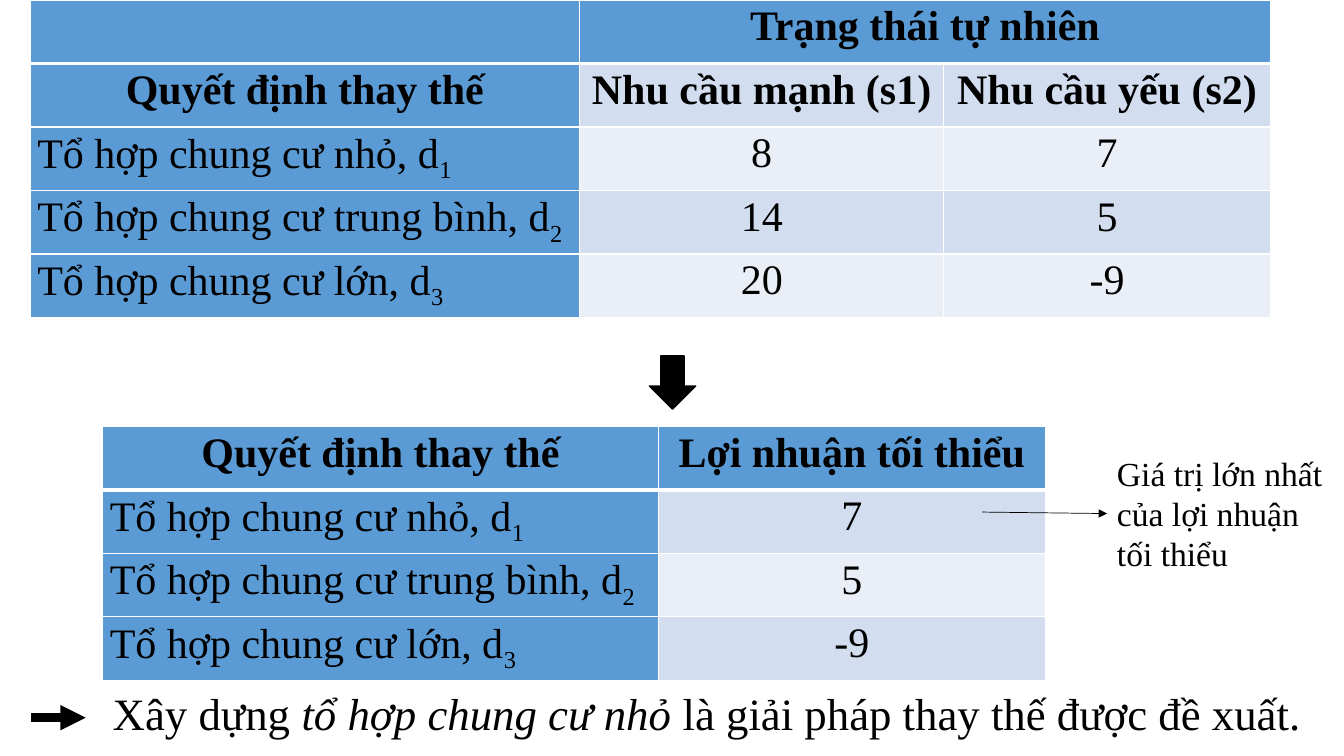
from dataclasses import dataclass

from lxml.etree import SubElement
from pptx import Presentation
from pptx.dml.color import RGBColor
from pptx.enum.shapes import MSO_CONNECTOR, MSO_SHAPE
from pptx.enum.text import MSO_AUTO_SIZE, PP_ALIGN
from pptx.oxml.ns import qn
from pptx.util import Pt

SCALE = 9144


def px(*nums):
    """Turn px lengths, 100 to the inch, into EMU."""
    return [num * SCALE for num in nums]


@dataclass(frozen=True)
class Theme:
    """Colours, font and type sizes of the slide."""
    ink: str = "000000"
    rule: str = "FFFFFF"
    head: str = "5B9BD5"
    bands: tuple = ("D2DEEF", "EAEFF7")
    font: str = "Times New Roman"
    cell: int = 30
    note: int = 24
    close: int = 32


class Board:
    """Draws styled elements on the current slide."""

    def __init__(self, slide, theme):
        self.shapes = slide.shapes
        self.theme = theme

    def label(self, par, text, size, bold=False):
        """Set text; parts between bars are subscript digits or italics."""
        for spot, part in enumerate(text.split("|")):
            run = par.add_run()
            run.text = part
            font = run.font
            font.name, font.size, font.bold = self.theme.font, Pt(size), bold
            font.color.rgb = RGBColor.from_string(self.theme.ink)
            if spot % 2 and part.isdigit():
                run._r.get_or_add_rPr().set("baseline", "-25000")
            elif spot % 2:
                font.italic = True

    def text(self, box, text, size):
        """Add a wrapped text box."""
        shape = self.shapes.add_textbox(*px(*box))
        frame = shape.text_frame
        frame.word_wrap = True
        frame.auto_size = MSO_AUTO_SIZE.SHAPE_TO_FIT_TEXT
        self.label(frame.paragraphs[0], text, size)
        return shape

    def edge(self, cell, low):
        """Rule the four sides of a cell, the bottom one low points wide."""
        for side, width in zip("LRTB", (1, 1, 1, low)):
            line = SubElement(cell._tc.get_or_add_tcPr(), qn(f"a:ln{side}"), w=str(Pt(width)))
            fill = SubElement(line, qn("a:solidFill"))
            SubElement(fill, qn("a:srgbClr"), val=self.theme.rule)

    def table(self, spot, widths, rows, heads=1):
        """Add a banded table with a blue top row and first column."""
        theme, high = self.theme, 63
        size = (sum(widths), high * len(rows))
        grid = self.shapes.add_table(len(rows), len(widths), *px(*spot, *size)).table
        for col, width in zip(grid.columns, px(*widths)):
            col.width = width
        for r, row in enumerate(rows):
            grid.rows[r].height = px(high)[0]
            for c, text in enumerate(row):
                cell = grid.cell(r, c)
                cell.margin_left = cell.margin_right = px(7)[0]
                cell.margin_top = cell.margin_bottom = 0
                self.edge(cell, 1 if r else 3)
                cell.fill.solid()
                tone = theme.bands[(r - 1) % 2] if r and c else theme.head
                cell.fill.fore_color.rgb = RGBColor.from_string(tone)
                if text:
                    par = cell.text_frame.paragraphs[0]
                    par.line_spacing = 1.07
                    par.alignment = PP_ALIGN.CENTER if c or r < heads else PP_ALIGN.LEFT
                    self.label(par, text, theme.cell, r < heads)
        return grid

    def arrow(self, ends, width):
        """Add a straight arrow."""
        link = self.shapes.add_connector(MSO_CONNECTOR.STRAIGHT, *px(*ends))
        link.line.width = Pt(width)
        link.line.color.rgb = RGBColor.from_string(self.theme.ink)
        props = link._element.spPr
        SubElement(props.find(qn("a:ln")), qn("a:tailEnd"), type="triangle")
        SubElement(props, qn("a:effectLst"))
        return link

    def block(self, kind, box):
        """Add a solid preset shape."""
        shape = self.shapes.add_shape(kind, *px(*box))
        shape.shadow.inherit = False
        shape.fill.solid()
        ink = RGBColor.from_string(self.theme.ink)
        shape.fill.fore_color.rgb = shape.line.color.rgb = ink
        shape.line.width = Pt(1)


def main():
    """Build the decision slide."""
    deck = Presentation()
    deck.slide_width, deck.slide_height = px(1333, 750)
    theme = Theme()
    board = Board(deck.slides.add_slide(deck.slide_layouts[6]), theme)

    choice = "Quyết định thay thế"
    plans = [
        ("Tổ hợp chung cư nhỏ, d|1", "8", "7"),
        ("Tổ hợp chung cư trung bình, d|2", "14", "5"),
        ("Tổ hợp chung cư lớn, d|3", "20", "-9"),
    ]
    least = [(name, weak) for name, strong, weak in plans]
    board.table((102, 423), (551, 384), [(choice, "Lợi nhuận tối thiểu"), *least])

    note = board.text((1098, 444, 230, 131), "Giá trị lớn nhất của lợi nhuận tối thiểu", theme.note)
    board.arrow((974, 508, 1098, 510), 0.5).end_connect(note, 1)

    board.arrow((31, 712, 85, 712), 6)
    board.text(
        (102, 675, 1214, 64),
        "Xây dựng |tổ hợp chung cư nhỏ |là giải pháp thay thế được đề xuất.",
        theme.close,
    )

    heads = [("", "Trạng thái tự nhiên", ""), (choice, "Nhu cầu mạnh (s1)", "Nhu cầu yếu (s2)")]
    payoff = board.table((30, 0), (545, 361, 324), heads + plans, heads=2)
    payoff.cell(0, 1).merge(payoff.cell(0, 2))
    board.block(MSO_SHAPE.DOWN_ARROW, (644, 353, 46, 53))

    deck.save("out.pptx")


if __name__ == "__main__":
    main()
